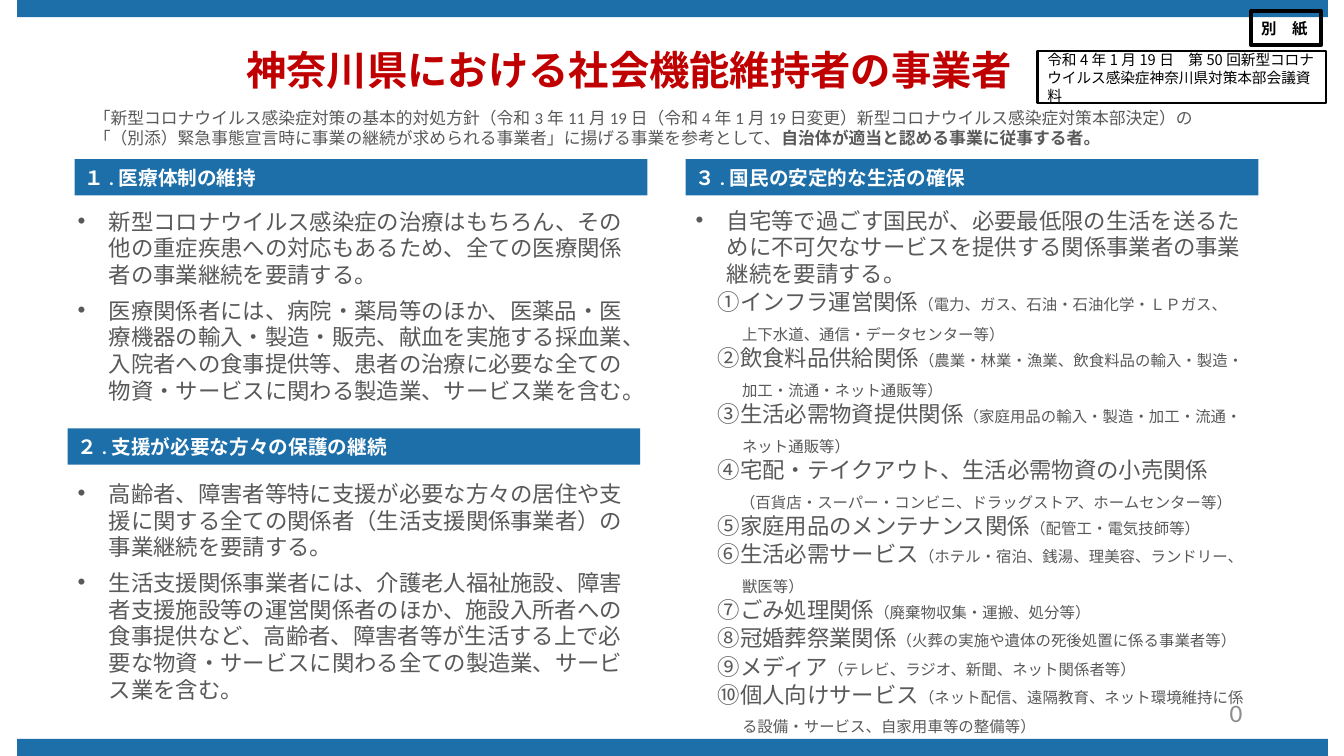
"""Builds a one-slide summary of essential service operators in Kanagawa."""
from lxml.etree import SubElement
from pptx import Presentation
from pptx.dml.color import RGBColor
from pptx.enum.lang import MSO_LANGUAGE_ID
from pptx.enum.shapes import MSO_SHAPE
from pptx.enum.text import MSO_ANCHOR, MSO_AUTO_SIZE, PP_ALIGN
from pptx.oxml.ns import qn
from pptx.util import Inches, Pt

COLORS = {"blue": "1D6FA9", "red": "C00000", "gray": "595959",
          "number": "8C8C8C", "white": "FFFFFF", "black": "000000"}
BODY, CJK = "Calibri", "Noto Sans CJK JP"
COLS, ROWS = 133.3, 75
LEFT, RIGHT, WIDTH = 6.7, 68, 56.8
ITEM, DETAIL, STORES = 2.2, 4.6, 4.4

INTRO = [
    ("「新型コロナウイルス感染症対策の基本的対処方針（令和3年11月19日（令和4年1月19日変更）"
     "新型コロナウイルス感染症対策本部決定）の「（別添）緊急事態宣言時に事業の継続が求められる"
     "事業者」に揚げる事業を参考として、", False),
    ("自治体が適当と認める事業に従事する者。", True),
]
MEDICAL = [
    "新型コロナウイルス感染症の治療はもちろん、その他の重症疾患への対応もあるため、"
    "全ての医療関係者の事業継続を要請する。",
    "医療関係者には、病院・薬局等のほか、医薬品・医療機器の輸入・製造・販売、献血を実施する採血業、"
    "入院者への食事提供等、患者の治療に必要な全ての物資・サービスに関わる製造業、サービス業を含む。",
]
SUPPORT = [
    "高齢者、障害者等特に支援が必要な方々の居住や支援に関する全ての関係者"
    "（生活支援関係事業者）の事業継続を要請する。",
    "生活支援関係事業者には、介護老人福祉施設、障害者支援施設等の運営関係者のほか、"
    "施設入所者への食事提供など、高齢者、障害者等が生活する上で必要な物資・サービスに関わる"
    "全ての製造業、サービス業を含む。",
]
LIVING = [
    "自宅等で過ごす国民が、必要最低限の生活を送るために不可欠なサービスを提供する"
    "関係事業者の事業継続を要請する。",
]
SERVICES = [
    (ITEM, "①インフラ運営関係", "（電力、ガス、石油・石油化学・ＬＰガス、"),
    (DETAIL, "", "上下水道、通信・データセンター等）"),
    (ITEM, "②飲食料品供給関係", "（農業・林業・漁業、飲食料品の輸入・製造・"),
    (DETAIL, "", "加工・流通・ネット通販等）"),
    (ITEM, "③生活必需物資提供関係", "（家庭用品の輸入・製造・加工・流通・"),
    (DETAIL, "", "ネット通販等）"),
    (ITEM, "④宅配・テイクアウト、生活必需物資の小売関係", ""),
    (STORES, "", "（百貨店・スーパー・コンビニ、ドラッグストア、ホームセンター等）"),
    (ITEM, "⑤家庭用品のメンテナンス関係", "（配管工・電気技師等）"),
    (ITEM, "⑥生活必需サービス", "（ホテル・宿泊、銭湯、理美容、ランドリー、"),
    (DETAIL, "", "獣医等）"),
    (ITEM, "⑦ごみ処理関係", "（廃棄物収集・運搬、処分等）"),
    (ITEM, "⑧冠婚葬祭業関係", "（火葬の実施や遺体の死後処置に係る事業者等）"),
    (ITEM, "⑨メディア", "（テレビ、ラジオ、新聞、ネット関係者等）"),
    (ITEM, "⑩個人向けサービス", "（ネット配信、遠隔教育、ネット環境維持に係"),
    (DETAIL, "", "る設備・サービス、自家用車等の整備等）"),
]


class Deck:
    """Holds the style and the current slide on a grid of small square cells."""

    def __init__(self):
        self.prs = Presentation()
        self.cell = Inches(0.1)
        self.prs.slide_width = self.units(COLS)
        self.prs.slide_height = self.units(ROWS)
        self.s = self.prs.slides.add_slide(self.prs.slide_layouts[4])

    def units(self, n):
        return round(n * self.cell)

    def color(self, name):
        return RGBColor.from_string(COLORS[name])

    def run(self, p, text, size, color="gray", bold=False, font=BODY, asian=BODY):
        r = p.add_run()
        r.text = text
        r.font.size, r.font.bold, r.font.name = Pt(size), bold, font
        r.font.color.rgb = self.color(color)
        r.font.language_id = MSO_LANGUAGE_ID.JAPANESE
        SubElement(r.font._element, qn("a:ea"), typeface=asian)

    def paragraph(self, tf, after=0, indent=0, hanging=0, bullet=False):
        p = tf.paragraphs[0] if not tf.paragraphs[0].runs else tf.add_paragraph()
        p.alignment = PP_ALIGN.LEFT
        p.space_before, p.space_after = Pt(0), Pt(after)
        pPr = p._p.get_or_add_pPr()
        pPr.set("marL", str(self.units(indent)))
        pPr.set("indent", str(-self.units(hanging)))
        if bullet:
            SubElement(pPr, qn("a:buFont"), typeface="Arial")
            SubElement(pPr, qn("a:buChar"), char="•")
        else:
            SubElement(pPr, qn("a:buNone"))
        return p

    def frame(self, sp, anchor):
        tf = sp.text_frame
        tf.word_wrap, tf.auto_size = True, MSO_AUTO_SIZE.NONE
        tf.vertical_anchor = anchor
        return tf

    def placeholder(self, idx, x, y, w, h, anchor=MSO_ANCHOR.TOP):
        sp = self.s.placeholders[idx]
        sp.left, sp.top, sp.width, sp.height = map(self.units, (x, y, w, h))
        return self.frame(sp, anchor)

    def title(self, text, *box):
        tf = self.placeholder(0, *box, anchor=MSO_ANCHOR.MIDDLE)
        self.run(self.paragraph(tf), text, 28.8, "red", True, CJK)

    def intro(self, runs, *box):
        p = self.paragraph(self.placeholder(1, *box), after=12)
        for text, bold in runs:
            self.run(p, text, 12, bold=bold)

    def bullets(self, idx, items, *box):
        tf = self.placeholder(idx, *box)
        for text in items:
            p = self.paragraph(tf, 6, 3.1, 3.1, bullet=True)
            self.run(p, text, 16)
        return tf

    def services(self, tf, rows):
        tf.margin_right = 0
        for indent, name, detail in rows:
            p = self.paragraph(tf, 6, indent)
            p.line_spacing = Pt(14)
            for text, size in ((name, 16), (detail, 11)):
                if text:
                    self.run(p, text, size, font=CJK, asian=CJK)

    def rect(self, x, y, w, h):
        sp = self.s.shapes.add_shape(MSO_SHAPE.RECTANGLE, *map(self.units, (x, y, w, h)))
        sp.shadow.inherit = False
        return sp

    def bar(self, x, y, w, h, text=""):
        sp = self.rect(x, y, w, h)
        sp.fill.solid()
        sp.fill.fore_color.rgb = self.color("blue")
        sp.line.fill.background()
        if text:
            p = self.paragraph(self.frame(sp, MSO_ANCHOR.MIDDLE))
            self.run(p, text, 14, "white", True)

    def label(self, text, size, line, bold, *box):
        sp = self.rect(*box)
        sp.fill.background()
        sp.line.color.rgb = self.color("black")
        sp.line.width = Pt(line)
        p = self.paragraph(self.frame(sp, MSO_ANCHOR.MIDDLE))
        p.line_spacing = Pt(round(size * 1.22, 1))
        self.run(p, text, size, "black", bold, CJK)

    def number(self, text, *box):
        sp = self.s.shapes.add_textbox(*map(self.units, box))
        p = self.paragraph(self.frame(sp, MSO_ANCHOR.MIDDLE))
        p.alignment = PP_ALIGN.RIGHT
        self.run(p, text, 18, "number")


def main():
    d = Deck()
    for y in (0, ROWS - 1.7):
        d.bar(1.7, y, 130, 1.7)
    d.title("神奈川県における社会機能維持者の事業者", 23.4, 3.2, 86.2, 7.4)
    d.number("0", 119, 68.7, 5.2, 4)
    d.intro(INTRO, 8.3, 10.2, 113.1, 5)
    d.bullets(2, MEDICAL, LEFT, 20.1, 58.1, 20.7)
    d.bullets(3, SUPPORT, LEFT, 47.1, 58.1, 23.4)
    d.services(d.bullets(4, LIVING, RIGHT, 20, WIDTH, 54), SERVICES)
    for x, y, heading in ((LEFT + 0.7, 15.8, "１.医療体制の維持"),
                          (LEFT, 42.5, "２.支援が必要な方々の保護の継続"),
                          (RIGHT, 15.8, "３.国民の安定的な生活の確保")):
        d.bar(x, y, WIDTH, 3.6, heading)
    d.label("令和4年1月19日　第50回新型コロナウイルス感染症神奈川県対策本部会議資料",
            10.5, 1.5, False, 102.9, 5.1, 28.6, 5.1)
    d.label("別　紙", 11, 2.75, True, 124.1, 1.1, 6.9, 3.4)
    d.prs.save("out.pptx")


if __name__ == "__main__":
    main()
